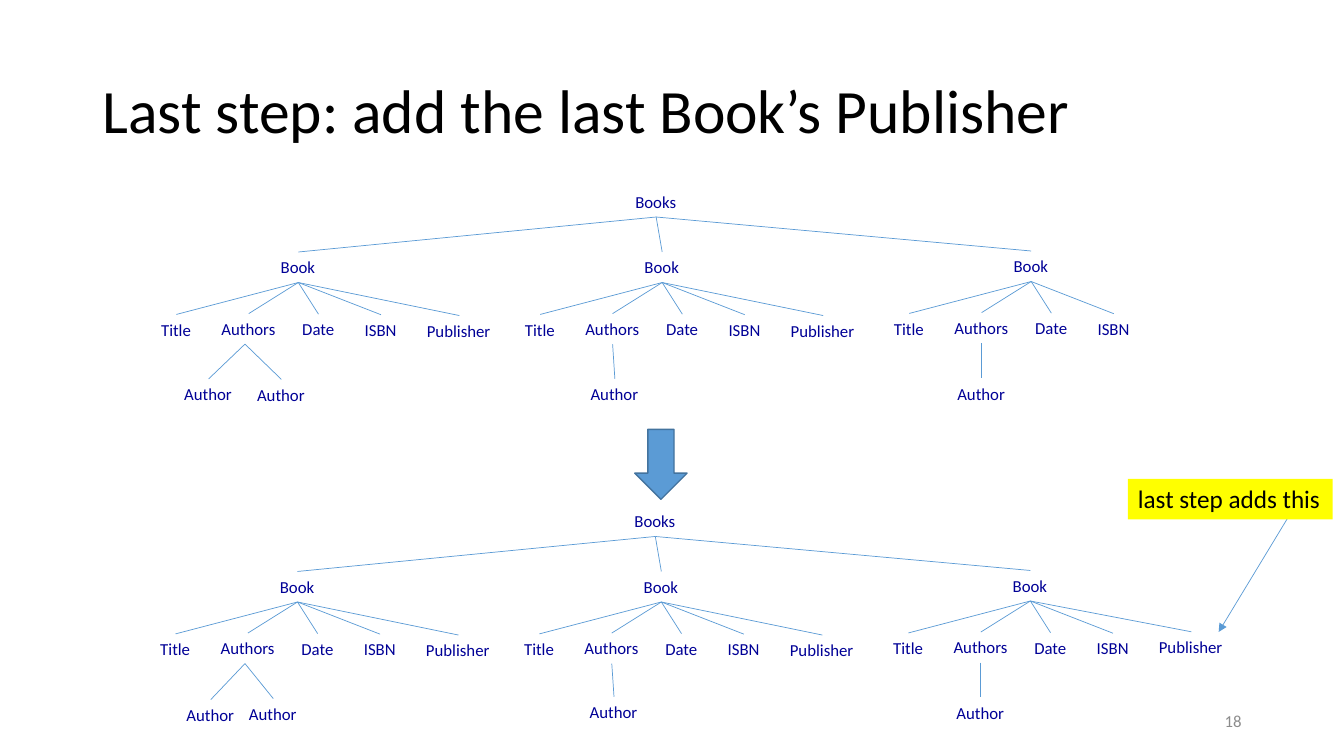
from lxml import etree
from pptx import Presentation
from pptx.dml.color import RGBColor
from pptx.enum.shapes import MSO_CONNECTOR, MSO_SHAPE
from pptx.enum.text import MSO_ANCHOR, MSO_AUTO_SIZE, PP_ALIGN
from pptx.oxml.ns import qn
from pptx.util import Pt

STRAIGHT = MSO_CONNECTOR.STRAIGHT
DOWN_ARROW, RECTANGLE = MSO_SHAPE.DOWN_ARROW, MSO_SHAPE.RECTANGLE
TOP, MIDDLE = MSO_ANCHOR.TOP, MSO_ANCHOR.MIDDLE
FIT, NO_FIT = MSO_AUTO_SIZE.SHAPE_TO_FIT_TEXT, MSO_AUTO_SIZE.NONE
LEFT, RIGHT = PP_ALIGN.LEFT, PP_ALIGN.RIGHT

THEME = {
    "font": "Calibri",
    "title": (44, RGBColor(0, 0, 0)),
    "node": (12, RGBColor(0, 0, 0x96)),
    "callout": (18, RGBColor(0, 0, 0)),
    "number": (12, RGBColor(0x8C, 0x8C, 0x8C)),
    "accent": RGBColor(0x5B, 0x9B, 0xD5),
    "outline": RGBColor(0x43, 0x73, 0x9E),
    "highlight": RGBColor(0xFF, 0xFF, 0),
}
HUG = {"word_wrap": False, "auto_size": FIT, "vertical_anchor": TOP}
FIXED = {"word_wrap": True, "auto_size": NO_FIT, "vertical_anchor": MIDDLE}

NODE_HEIGHT = 21.8
WIDTHS = {"Books": 44, "Book": 39.4, "Title": 36, "Authors": 53.2, "Date": 37.4,
          "ISBN": 37.4, "Publisher": 60.6, "Author": 49}
FIELDS = [("Title", -87.1, 44.6), ("Authors", -35.4, 44), ("Date", 14.4, 44.4),
          ("ISBN", 59, 44.8)]
BOOKS = [(213.1, 46.8), (473, 46.8), (736.6, 46.1)]
TREES = [
    {"root": (468.7, 133.2), "publishers": [45.4, 45.4, None],
     "authors": [[(149, 270.7), (201, 271)], [(439.2, 270.7)], [(701.2, 270.2)]]},
    {"root": (468.1, 361.4), "publishers": [45.4, 45.4, 43.8],
     "authors": [[(150.6, 499.7), (195.2, 499)], [(438.6, 497.7)], [(700.6, 498.2)]]},
]
FORK_X = 175

prs = Presentation()
prs.slide_width, prs.slide_height = Pt(960), Pt(540)
s = prs.slides.add_slide(prs.slide_layouts[5])
lines = []


def write(sp, text, style, frame, align=LEFT):
    tf = sp.text_frame
    for name, value in frame.items():
        setattr(tf, name, value)
    p = tf.paragraphs[0]
    p.alignment = align
    r = p.add_run()
    r.text = text
    size, color = THEME[style]
    for name, value in {"name": THEME["font"], "size": Pt(size)}.items():
        setattr(r.font, name, value)
    r.font.color.rgb = color
    return p


def node(label, cx, top, parent=None, fork_x=None):
    width = WIDTHS[label]
    sp = s.shapes.add_textbox(Pt(cx - width / 2), Pt(top), Pt(width), Pt(NODE_HEIGHT))
    write(sp, label, "node", HUG)
    if parent is not None:
        cxn = s.shapes.add_connector(STRAIGHT, Pt(fork_x or cx), parent.top + parent.height,
                                     Pt(cx), Pt(top))
        if fork_x is None:
            cxn.begin_connect(parent, 2)
        cxn.end_connect(sp, 0)
        lines.append(cxn)
    return sp


title = s.shapes.title
title.left, title.top, title.width, title.height = Pt(66), Pt(28.8), Pt(828), Pt(104.4)
write(title, "Last step: add the last Book’s Publisher", "title", FIXED).line_spacing = 0.9

for tree in TREES:
    root_x, root_top = tree["root"]
    shift = root_x - TREES[0]["root"][0]
    books = node("Books", root_x, root_top)
    for (x, drop), publisher_drop, authors in zip(BOOKS, tree["publishers"], tree["authors"]):
        book_x, book_top = x + shift, root_top + drop
        book = node("Book", book_x, book_top, books)
        fields = {name: node(name, book_x + dx, book_top + dy, book) for name, dx, dy in FIELDS}
        if publisher_drop:
            node("Publisher", book_x + 115, book_top + publisher_drop, book)
        for author_x, author_top in authors:
            node("Author", author_x, author_top, fields["Authors"],
                 FORK_X if len(authors) > 1 else None)

arrow = s.shapes.add_shape(DOWN_ARROW, Pt(453.4), Pt(306.7), Pt(37.4), Pt(50))
arrow.shadow.inherit = False
arrow.fill.solid()
arrow.fill.fore_color.rgb = THEME["accent"]
arrow.line.color.rgb = THEME["outline"]
arrow.line.width = Pt(1)

pointer = s.shapes.add_connector(STRAIGHT, Pt(920.2), Pt(369.4), Pt(870.5), Pt(451.4))
lines.append(pointer)
for cxn in lines:
    cxn.line.color.rgb = THEME["accent"]
    cxn.line.width = Pt(0.5)
    etree.SubElement(cxn._element.spPr, qn("a:effectLst"))
etree.SubElement(pointer.line._get_or_add_ln(), qn("a:tailEnd"), type="triangle")

callout = s.shapes.add_shape(RECTANGLE, Pt(805.7), Pt(342), Pt(146.2), Pt(29))
callout.shadow.inherit = False
callout.fill.solid()
callout.fill.fore_color.rgb = THEME["highlight"]
callout.line.fill.background()
write(callout, "last step adds this", "callout", HUG)

number = s.shapes.add_textbox(Pt(678), Pt(500.5), Pt(216), Pt(28.8))
write(number, "18", "number", FIXED, RIGHT)

prs.save("out.pptx")
